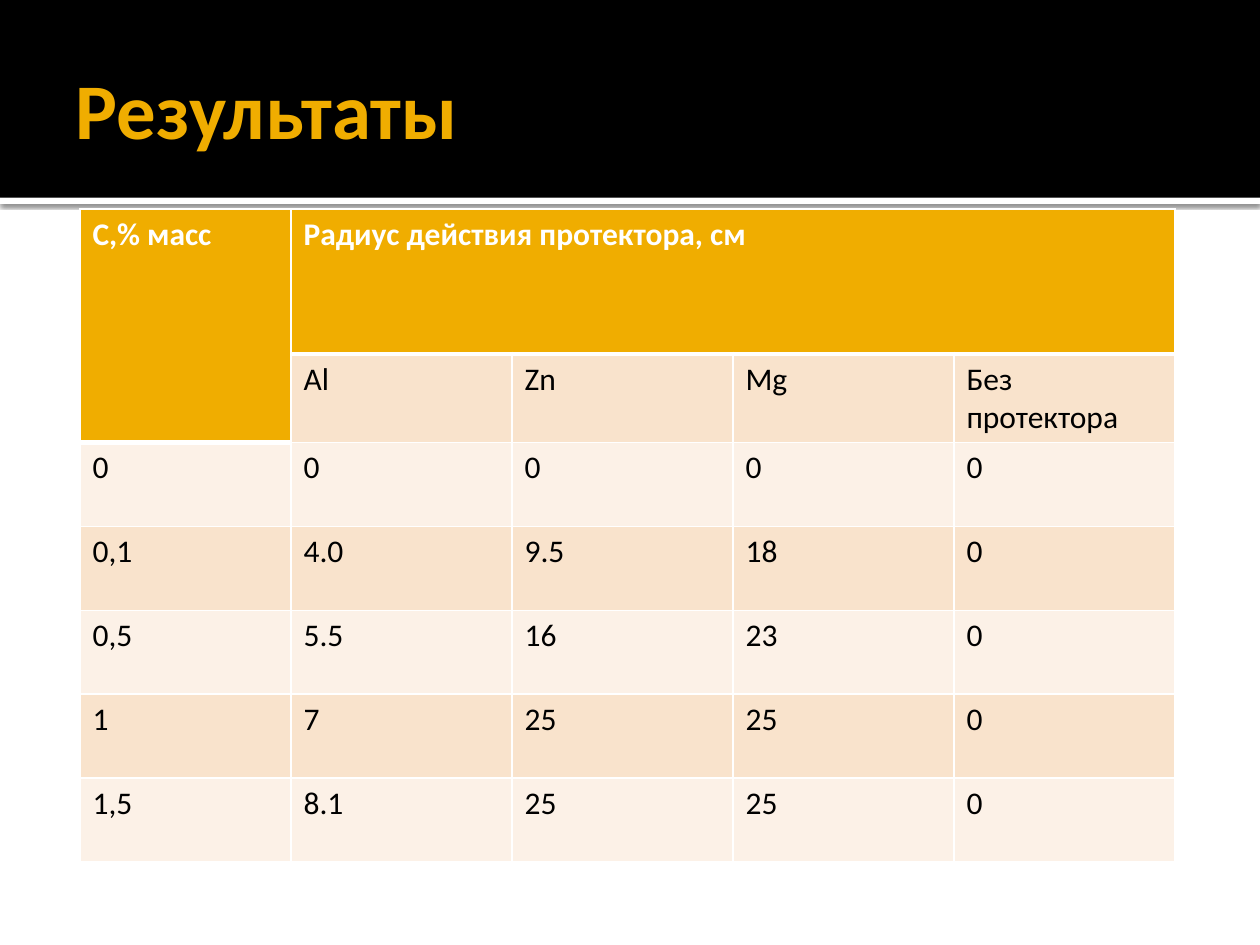
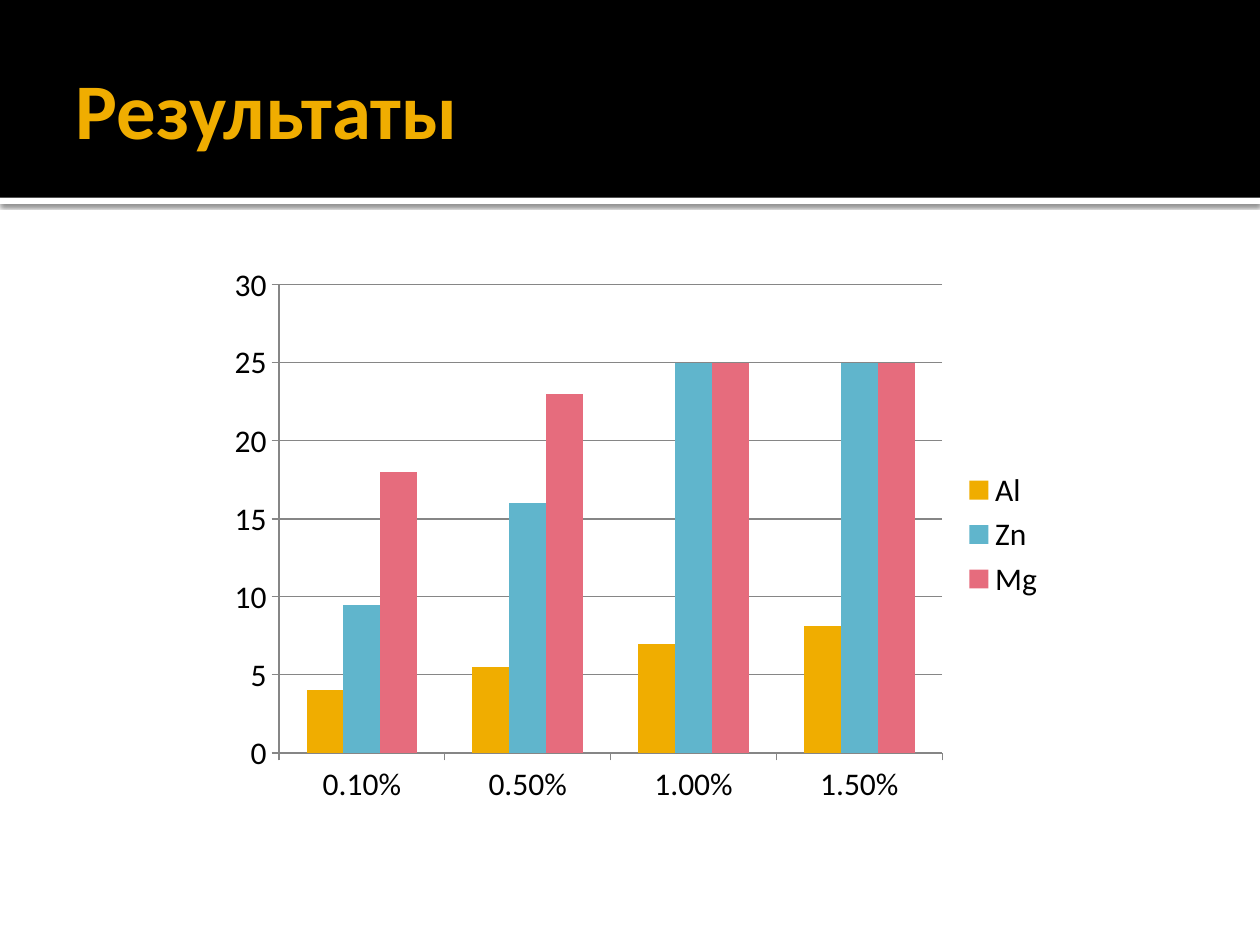
from dataclasses import dataclass

from lxml.etree import SubElement
from pptx import Presentation
from pptx.chart.data import CategoryChartData
from pptx.dml.color import RGBColor
from pptx.enum.chart import XL_CHART_TYPE as ChartType
from pptx.enum.chart import XL_LEGEND_POSITION as LegendPosition
from pptx.enum.chart import XL_TICK_MARK as TickMark
from pptx.enum.shapes import MSO_SHAPE as Shape
from pptx.enum.text import MSO_ANCHOR as Anchor
from pptx.enum.text import PP_ALIGN as Align
from pptx.oxml import parse_xml
from pptx.oxml.ns import nsdecls, qn
from pptx.util import Pt


@dataclass(frozen=True)
class Theme:
    font: str = "Calibri"
    title_size: float = 45
    body_size: float = 18
    black: str = "000000"
    white: str = "FFFFFF"
    gold: str = "F0AD00"
    blue: str = "60B5CC"
    pink: str = "E66C7D"
    row_dark: str = "F9E3CC"
    row_light: str = "FCF1E7"
    axis_gray: str = "868686"


THEME = Theme()
PAGE_WIDTH, PAGE_HEIGHT = 720, 540
BAND_HEIGHT = 113
TITLE = "Результаты"

METALS = ["Al", "Zn", "Mg"]
RADIUS_ROWS = [
    ["0", "0", "0", "0", "0"],
    ["0,1", "4.0", "9.5", "18", "0"],
    ["0,5", "5.5", "16", "23", "0"],
    ["1", "7", "25", "25", "0"],
    ["1,5", "8.1", "25", "25", "0"],
]
TABLE_ROWS = [
    ["C,% масс", "Радиус действия протектора, см", "", "", ""],
    ["", *METALS, "Без протектора"],
    *RADIUS_ROWS,
]
COLUMN_WIDTHS = [120.6] + [126.3] * 4
ROW_HEIGHTS = [82.8, 50.2] + [48] * len(RADIUS_ROWS)

CONCENTRATIONS = [0.001, 0.005, 0.01, 0.015]
PERCENT_FORMAT = "0.00%"
RADIUS_SERIES = [
    ("Al", [4, 5.5, 7, 8.1], THEME.gold),
    ("Zn", [9.5, 16, 25, 25], THEME.blue),
    ("Mg", [18, 23, 25, 25], THEME.pink),
]


def rgb(color):
    return RGBColor.from_string(color)


def write_text(frame, text, *, size=THEME.body_size, color=THEME.black,
               bold=False, align=Align.LEFT):
    para = frame.paragraphs[0]
    para.alignment = align
    span = para.add_run()
    span.text = text
    span.font.name = THEME.font
    span.font.size = Pt(size)
    span.font.bold = bold
    span.font.color.rgb = rgb(color)


def add_bar(page, top, height, color):
    """Add a plain rectangle across the whole page."""
    bar = page.shapes.add_shape(Shape.RECTANGLE, 0, Pt(top), Pt(PAGE_WIDTH), Pt(height))
    bar.fill.solid()
    bar.fill.fore_color.rgb = rgb(color)
    bar.line.fill.background()
    bar.shadow.inherit = False
    return bar


def add_drop_shadow(bar):
    effects = bar.element.spPr.find(qn("a:effectLst"))
    effects.append(parse_xml(
        f'<a:outerShdw {nsdecls("a")} blurRad="{Pt(2.5)}" dist="{Pt(0.8)}" '
        f'dir="5400000" algn="t" rotWithShape="0"><a:srgbClr val="{THEME.black}">'
        '<a:alpha val="60000"/></a:srgbClr></a:outerShdw>'))


def add_titled_page(deck, title):
    page = deck.slides.add_slide(deck.slide_layouts[6])
    add_drop_shadow(add_bar(page, BAND_HEIGHT, 3.6, THEME.white))
    add_bar(page, 0, BAND_HEIGHT, THEME.black)

    box = page.shapes.add_textbox(Pt(36), Pt(12.2), Pt(648), Pt(98.6))
    frame = box.text_frame
    frame.word_wrap = True
    frame.vertical_anchor = Anchor.MIDDLE
    frame.margin_left = Pt(7.2)
    frame.margin_right = frame.margin_top = frame.margin_bottom = Pt(3.6)
    write_text(frame, title, size=THEME.title_size, color=THEME.gold, bold=True)
    return page


def add_cell_border(cell, side, width):
    line = SubElement(cell._tc.get_or_add_tcPr(), qn(f"a:ln{side}"), w=str(Pt(width)))
    fill = SubElement(line, qn("a:solidFill"))
    SubElement(fill, qn("a:srgbClr"), val=THEME.white)


def format_cell(cell, row, column, text):
    is_header = row == 0 or (row == 1 and column == 0)
    # Lower rows share their top edge with the row above.
    add_cell_border(cell, "L", 1)
    add_cell_border(cell, "R", 1)
    if row == 0:
        add_cell_border(cell, "T", 1)
    add_cell_border(cell, "B", 3 if is_header else 1)

    body_color = THEME.row_dark if row % 2 else THEME.row_light
    cell.fill.solid()
    cell.fill.fore_color.rgb = rgb(THEME.gold if is_header else body_color)
    if text:
        write_text(cell.text_frame, text, bold=is_header,
                   color=THEME.white if is_header else THEME.black)


def add_radius_table(page):
    table = page.shapes.add_table(
        len(ROW_HEIGHTS), len(COLUMN_WIDTHS), Pt(45.7), Pt(119.5),
        Pt(sum(COLUMN_WIDTHS)), Pt(sum(ROW_HEIGHTS))).table
    for column, width in zip(table.columns, COLUMN_WIDTHS):
        column.width = Pt(width)
    for row, height in zip(table.rows, ROW_HEIGHTS):
        row.height = Pt(height)
    for row, texts in enumerate(TABLE_ROWS):
        for column, text in enumerate(texts):
            format_cell(table.cell(row, column), row, column, text)
    table.cell(0, 0).merge(table.cell(1, 0))
    table.cell(0, 1).merge(table.cell(0, 4))


def format_axis(axis):
    axis.major_tick_mark = TickMark.OUTSIDE
    axis.minor_tick_mark = TickMark.NONE
    axis.format.line.color.rgb = rgb(THEME.axis_gray)
    axis.format.line.width = Pt(0.75)


def add_radius_chart(page):
    data = CategoryChartData()
    data.categories = CONCENTRATIONS
    data.categories.number_format = PERCENT_FORMAT
    for name, values, _ in RADIUS_SERIES:
        data.add_series(name, values)
    chart = page.shapes.add_chart(
        ChartType.COLUMN_CLUSTERED, Pt(124.5), Pt(145.5), Pt(480), Pt(320), data).chart

    chart.has_title = False
    chart.font.name = THEME.font
    chart.font.size = Pt(THEME.body_size)
    chart.font.color.rgb = rgb(THEME.black)
    chart.has_legend = True
    chart.legend.position = LegendPosition.RIGHT
    chart.legend.include_in_layout = False

    format_axis(chart.category_axis)
    labels = chart.category_axis.tick_labels
    labels.number_format = PERCENT_FORMAT
    labels.number_format_is_linked = True
    values_axis = chart.value_axis
    format_axis(values_axis)
    values_axis.minimum_scale, values_axis.maximum_scale = 0, 30
    values_axis.major_unit = 5
    values_axis.has_major_gridlines = True
    grid_line = values_axis.major_gridlines.format.line
    grid_line.color.rgb = rgb(THEME.axis_gray)
    grid_line.width = Pt(0.75)

    plot = chart.plots[0]
    plot.gap_width = 150
    plot.overlap = 0
    plot.vary_by_categories = False
    for series, (_, _, color) in zip(plot.series, RADIUS_SERIES):
        series.format.fill.solid()
        series.format.fill.fore_color.rgb = rgb(color)


def main():
    deck = Presentation()
    deck.slide_width, deck.slide_height = Pt(PAGE_WIDTH), Pt(PAGE_HEIGHT)
    add_radius_table(add_titled_page(deck, TITLE))
    add_radius_chart(add_titled_page(deck, TITLE))
    deck.save("out.pptx")


if __name__ == "__main__":
    main()
